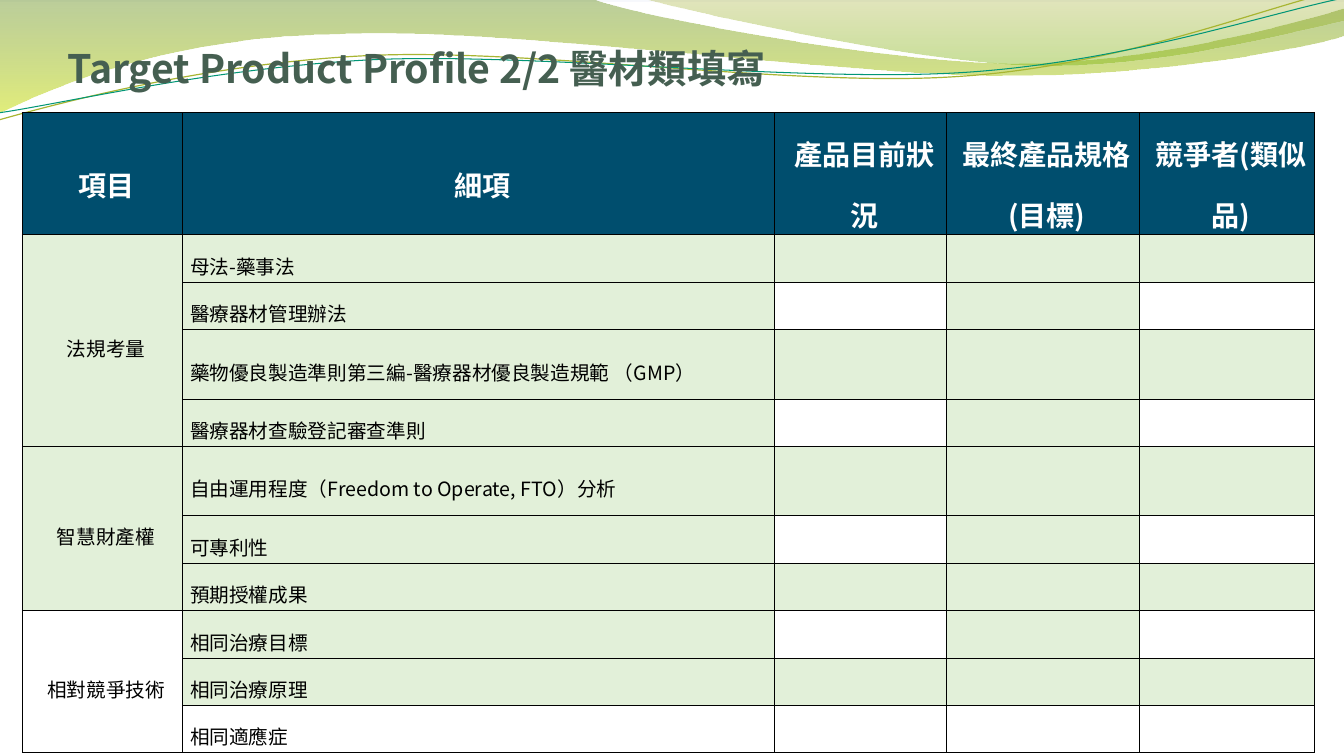
from math import cos, radians, sin

from pptx import Presentation
from pptx.dml.color import RGBColor
from pptx.enum.shapes import MSO_SHAPE
from pptx.enum.text import MSO_ANCHOR, MSO_AUTO_SIZE, PP_ALIGN
from pptx.oxml.ns import qn
from pptx.util import Inches, Pt
from lxml.etree import SubElement

FONT = "Noto Sans CJK TC"
WHITE = RGBColor(0xFF, 0xFF, 0xFF)
BLACK = RGBColor(0x00, 0x00, 0x00)
NAVY = RGBColor(0x00, 0x4E, 0x6E)
PALE_GREEN = RGBColor(0xE2, 0xF0, 0xD9)
TITLE_GREEN = RGBColor(0x45, 0x5F, 0x51)
SKY = RGBColor(0xF6, 0xF8, 0xFC)
BLUE = RGBColor(0xAB, 0xC0, 0xE4)
MOSS = RGBColor(0x66, 0x8F, 0x1B)
LIME = RGBColor(0xCA, 0xE0, 0x0E)
OLIVE = RGBColor(0x99, 0xA7, 0x19)
LEAF = RGBColor(0x80, 0xB8, 0x14)
STRAW = RGBColor(0xA8, 0xB5, 0x32)
TEAL = RGBColor(0x02, 0x96, 0x76)


def write(tf, text, size=14, color=BLACK, bold=False, align=PP_ALIGN.LEFT,
          spacing=1.5, indent=5.4):
    for i, line in enumerate(text.split("\n")):
        p = tf.add_paragraph() if i else tf.paragraphs[0]
        p.alignment = align
        p.line_spacing = spacing
        p.space_before = Pt(0)
        pPr = p._p.get_or_add_pPr()
        pPr.set("marL", str(Pt(indent)))
        pPr.set("indent", "0")
        r = p.add_run()
        r.text = line
        r.font.name = FONT
        r.font.size = Pt(size)
        r.font.bold = bold
        r.font.color.rgb = color
        SubElement(r._r.get_or_add_rPr(), qn("a:ea")).set("typeface", FONT)


def add_curve(start, *segments, closed=True, turn=0, center=(0, 0)):
    points = [start]
    for seg in segments:
        points += zip(seg[::2], seg[1::2])
    c, d = cos(radians(turn)), sin(radians(turn))
    cx, cy = center
    emu = [(Inches(cx + (x - cx) * c + (y - cy) * d),
            Inches(cy - (x - cx) * d + (y - cy) * c)) for x, y in points]
    builder = slide.shapes.build_freeform(*emu[0], scale=1.0)
    builder.add_line_segments(emu[1:], close=closed)
    s = builder.convert_to_shape()
    s.shadow.inherit = False
    s.rotation = turn
    outline = s._element.spPr.find(".//" + qn("a:path"))
    steps = iter(outline.findall(qn("a:lnTo")))
    for seg in segments:
        if len(seg) == 2:
            outline.append(next(steps))
            continue
        bezier = SubElement(outline, qn("a:cubicBezTo"))
        for _ in range(3):
            step = next(steps)
            bezier.append(step[0])
            outline.remove(step)
    for end in outline.findall(qn("a:close")):
        outline.append(end)
    return s


prs = Presentation()
prs.slide_width = Inches(13.33)
prs.slide_height = Inches(7.5)
slide = prs.slides.add_slide(prs.slide_layouts[5])
title = slide.shapes.title

sheet = slide.shapes.add_shape(MSO_SHAPE.RECTANGLE, 0, Inches(0.02),
                               prs.slide_width, prs.slide_height)
sheet.shadow.inherit = False
sheet.fill.solid()
sheet.fill.fore_color.rgb = WHITE
sheet.line.fill.background()

wave = add_curve((-0.02, 0), (5.87, -0.01),
                 (6.34, 0.17, 8.84, 0.63, 10.11, 0.63),
                 (11.37, 0.63, 12.77, 0.26, 13.33, 0.09), (13.34, 0.36),
                 (13.11, 0.44, 11.59, 0.76, 9.94, 0.75),
                 (8.29, 0.75, 5.09, 0.28, 3.43, 0.34),
                 (1.72, 0.36, 0.61, 0.83, -0.02, 1.13), (0, 0))
crest = add_curve((6.38, -0.01), (6.79, 0.11, 9.09, 0.62, 10.25, 0.65),
                  (11.4, 0.69, 12.82, 0.32, 13.33, 0.21), (13.33, 0), (6.38, -0.01))

slide_fill = slide.background.fill
for fill, colors in ((slide_fill, (SKY, BLUE)), (wave.fill, (MOSS, LIME)),
                     (crest.fill, (OLIVE, LEAF))):
    fill.gradient()
    fill.gradient_angle = 270
    for stop, color in zip(fill.gradient_stops, colors):
        stop.color.rgb = color

for s, opacities in ((wave, (44, 55)), (crest, (29, 44))):
    s.line.fill.background()
    for clr, opacity in zip(s._element.spPr.iter(qn("a:srgbClr")), opacities):
        SubElement(clr, qn("a:alpha")).set("val", str(opacity * 1000))

straw_line = add_curve((-0.01, 1.19), (0.63, 1.01, 2.1, 0.62, 3.69, 0.55),
                       (5.27, 0.48, 7.89, 0.87, 9.49, 0.76),
                       (11.1, 0.66, 12.51, 0.08, 13.3, -0.1),
                       closed=False, turn=357.3, center=(6.65, 0.58))
teal_line = add_curve((-0.01, 1.12), (0.62, 1.03, 2.18, 0.66, 3.77, 0.59),
                      (5.37, 0.53, 7.96, 0.82, 9.55, 0.72),
                      (11.14, 0.62, 12.55, 0.14, 13.33, -0.02),
                      closed=False, turn=357.3, center=(6.67, 0.59))
for s, color, width in ((straw_line, STRAW, 0.85), (teal_line, TEAL, 0.75)):
    s.fill.background()
    s.line.color.rgb = color
    s.line.width = Pt(width)

slide.shapes._spTree.append(title._element)
title.left, title.top = Inches(0.67), Inches(0.36)
title.width, title.height = Inches(12), Inches(0.58)
tf = title.text_frame
tf.auto_size = MSO_AUTO_SIZE.NONE
tf.word_wrap = True
tf.vertical_anchor = MSO_ANCHOR.MIDDLE
tf.margin_left = tf.margin_right = tf.margin_bottom = 0
tf.margin_top = Inches(0.05)
write(tf, "Target Product Profile 2/2 醫材類填寫", size=28, color=TITLE_GREEN,
      bold=True, spacing=1.0, indent=0)

headers = ["項目", "細項", "產品目前狀況", "最終產品規格\n(目標)", "競爭者(類似品)"]
groups = [
    ("法規考量", PALE_GREEN, ["母法-藥事法", "醫療器材管理辦法",
                          "藥物優良製造準則第三編-醫療器材優良製造規範 （GMP）",
                          "醫療器材查驗登記審查準則"]),
    ("智慧財產權", PALE_GREEN, ["自由運用程度（Freedom to Operate, FTO）分析",
                           "可專利性", "預期授權成果"]),
    ("相對競爭技術", WHITE, ["相同治療目標", "相同治療原理", "相同適應症"]),
]
col_widths = [1.59, 5.87, 1.71, 1.91, 1.74]
row_heights = [0.59] + [0.69 if i in (3, 5) else 0.47 for i in range(1, 11)]
last = len(row_heights) - 1
table = slide.shapes.add_table(len(row_heights), len(col_widths), Inches(0.22), Inches(1.12),
                               Inches(sum(col_widths)), Inches(sum(row_heights))).table
table.first_row = table.horz_banding = False
for col, width in zip(table.columns, col_widths):
    col.width = Inches(width)
for row, height in zip(table.rows, row_heights):
    row.height = Inches(height)

for i in range(len(row_heights)):
    for j in range(len(col_widths)):
        cell = table.cell(i, j)
        tcPr = cell._tc.get_or_add_tcPr()
        for side in ("a:lnL", "a:lnR", "a:lnT", "a:lnB"):
            ln = SubElement(tcPr, qn(side), w=str(Pt(0.75)))
            SubElement(SubElement(ln, qn("a:solidFill")), qn("a:srgbClr"), val=str(BLACK))
        plain = i == last or (i % 2 == 0 and j in (2, 4))
        cell.fill.solid()
        cell.fill.fore_color.rgb = NAVY if i == 0 else WHITE if plain else PALE_GREEN
        if i == 0 or j < 2:
            cell.vertical_anchor = MSO_ANCHOR.MIDDLE
            cell.margin_left = cell.margin_right = cell.margin_top = cell.margin_bottom = 0

for j, header in enumerate(headers):
    write(table.cell(0, j).text_frame, header, size=20, color=WHITE, bold=True,
          align=PP_ALIGN.CENTER)
target = table.cell(0, 3)
target.vertical_anchor = MSO_ANCHOR.TOP
target.margin_left = target.margin_right = Inches(0.05)

top = 1
for name, color, details in groups:
    group = table.cell(top, 0)
    group.merge(table.cell(top + len(details) - 1, 0))
    group.fill.fore_color.rgb = color
    write(group.text_frame, name, align=PP_ALIGN.CENTER)
    for i, detail in enumerate(details, top):
        write(table.cell(i, 1).text_frame, detail)
    top += len(details)

prs.save("out.pptx")
